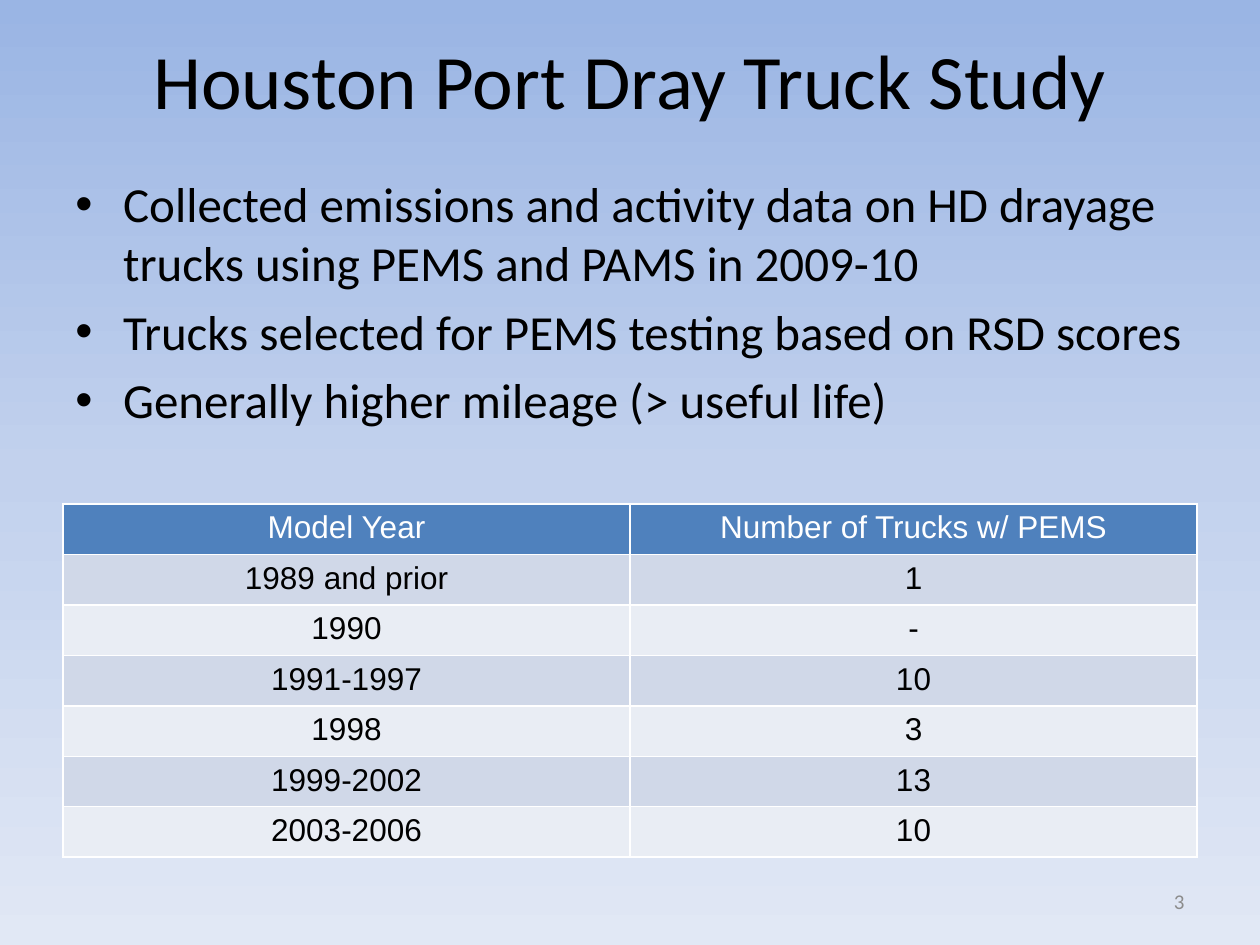
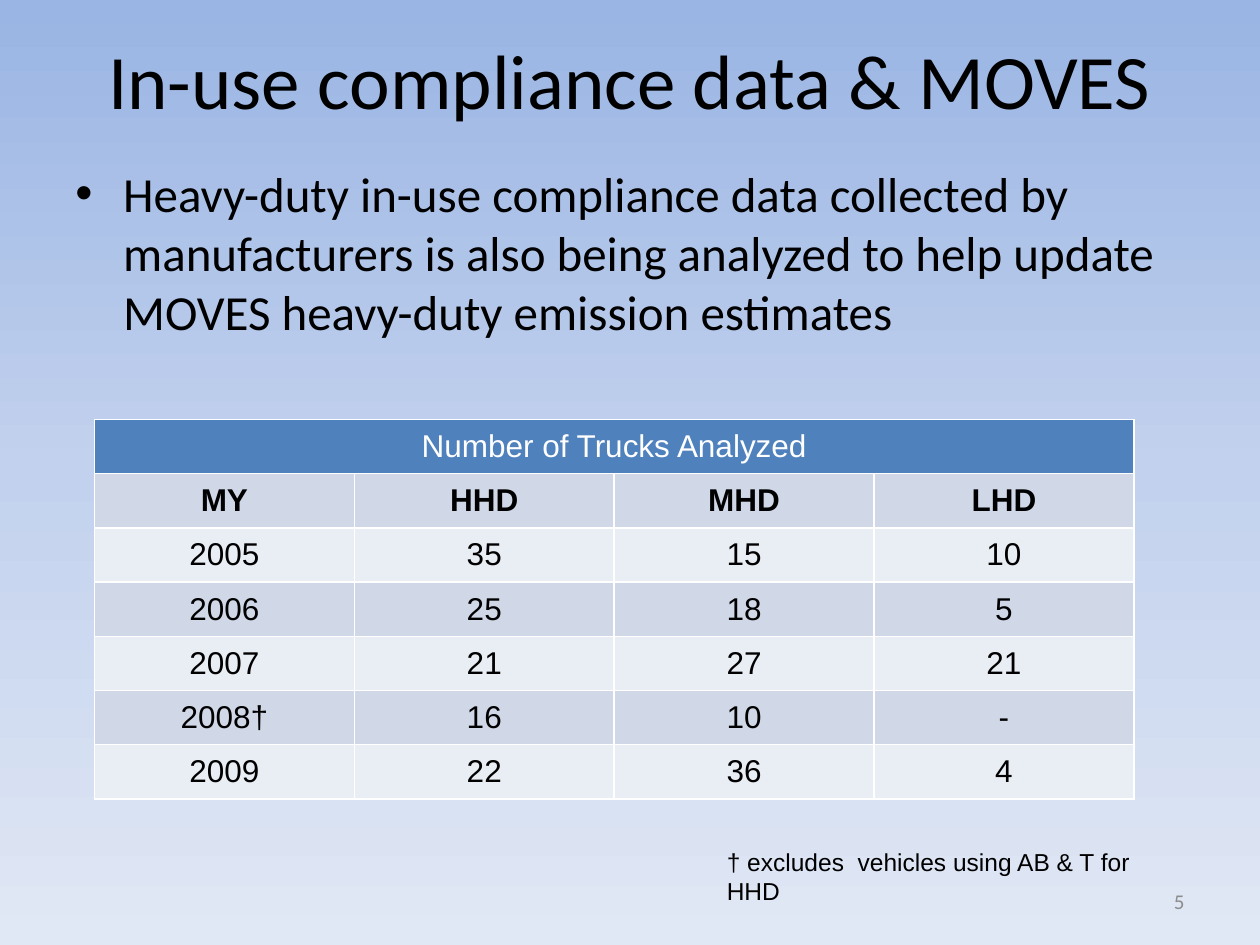
from copy import deepcopy

from lxml.etree import SubElement
from pptx import Presentation
from pptx.dml.color import RGBColor
from pptx.enum.text import MSO_ANCHOR, PP_ALIGN
from pptx.oxml.ns import qn
from pptx.util import Inches, Pt

BLACK = RGBColor(0x00, 0x00, 0x00)
WHITE = RGBColor(0xFF, 0xFF, 0xFF)
GRAY = RGBColor(0x8C, 0x8C, 0x8C)
HEADER_BLUE = RGBColor(0x4F, 0x81, 0xBD)
BAND_DARK = RGBColor(0xD0, 0xD8, 0xE8)
BAND_LIGHT = RGBColor(0xE9, 0xED, 0xF4)
SKY = [(0, RGBColor(0x9A, 0xB5, 0xE4)),
       (0.5, RGBColor(0xC2, 0xD1, 0xED)),
       (1, RGBColor(0xE1, 0xE8, 0xF5))]

TITLE_BOX = (0.5, 0, 9, 1.25)
NUMBER_BOX = (7.17, 6.95, 2.33, 0.4)
BULLET_INDENT = Inches(0.38)


def write(para, text, font="Arial", size=18, color=BLACK, bold=False,
          align=PP_ALIGN.LEFT):
    """Put formatted text into a paragraph."""
    para.alignment = align
    span = para.add_run()
    span.text = text
    span.font.name = font
    span.font.size = Pt(size)
    span.font.bold = bold
    span.font.color.rgb = color


def add_frame(page, box, anchor=MSO_ANCHOR.TOP):
    frame = page.shapes.add_textbox(*map(Inches, box)).text_frame
    frame.word_wrap = True
    frame.vertical_anchor = anchor
    return frame


def add_background(page):
    fill = page.background.fill
    fill.gradient()
    fill.gradient_angle = 270
    stop_list = page.background._cSld.find(".//" + qn("a:gsLst"))
    stop_list.append(deepcopy(stop_list[-1]))
    for stop, (position, color) in zip(fill.gradient_stops, SKY):
        stop.position = position
        stop.color.rgb = color


def add_base(deck, title, number):
    """Start a page with its background, title and page number."""
    page = deck.slides.add_slide(deck.slide_layouts[6])
    add_background(page)
    write(add_frame(page, TITLE_BOX, MSO_ANCHOR.MIDDLE).paragraphs[0], title,
          font="Calibri", size=44, align=PP_ALIGN.CENTER)
    write(add_frame(page, NUMBER_BOX, MSO_ANCHOR.MIDDLE).paragraphs[0],
          str(number), font="Calibri", size=12, color=GRAY,
          align=PP_ALIGN.RIGHT)
    return page


def add_bullets(page, box, lines):
    frame = add_frame(page, box)
    for index, line in enumerate(lines):
        para = frame.add_paragraph() if index else frame.paragraphs[0]
        para.space_before = Pt(5.6)
        write(para, line, font="Calibri", size=28)
        properties = para._p.get_or_add_pPr()
        properties.set("marL", str(BULLET_INDENT))
        properties.set("indent", str(-BULLET_INDENT))
        SubElement(properties, qn("a:buFont"), typeface="Arial")
        SubElement(properties, qn("a:buChar"), char="•")


def add_borders(cell):
    properties = cell._tc.get_or_add_tcPr()
    for side in "LRTB":
        line = SubElement(properties, qn(f"a:ln{side}"), w=str(Pt(1)))
        fill = SubElement(line, qn("a:solidFill"))
        SubElement(fill, qn("a:srgbClr"), val=str(WHITE))


def add_banded_table(page, box, rows, bold_row=None, anchor=MSO_ANCHOR.TOP):
    """Fill the box with equal rows and columns under a blue header."""
    row_count, column_count = len(rows), len(rows[-1])
    table = page.shapes.add_table(row_count, column_count,
                                  *map(Inches, box)).table
    for row_index, values in enumerate(rows):
        is_header = row_index == 0
        band = BAND_DARK if row_index % 2 else BAND_LIGHT
        for column_index in range(column_count):
            cell = table.cell(row_index, column_index)
            add_borders(cell)
            cell.fill.solid()
            cell.fill.fore_color.rgb = HEADER_BLUE if is_header else band
            cell.vertical_anchor = anchor
            if column_index < len(values):
                write(cell.text_frame.paragraphs[0], values[column_index],
                      color=WHITE if is_header else BLACK,
                      bold=row_index == bold_row, align=PP_ALIGN.CENTER)
    # A single heading spans the whole table
    if len(rows[0]) == 1:
        table.cell(0, 0).merge(table.cell(0, column_count - 1))


def add_dray_study(deck):
    page = add_base(deck, "Houston Port Dray Truck Study", 3)
    add_bullets(page, (0.5, 1.33, 9, 3.25), [
        "Collected emissions and activity data on HD drayage trucks using "
        "PEMS and PAMS in 2009-10",
        "Trucks selected for PEMS testing based on RSD scores",
        "Generally higher mileage (> useful life)",
    ])
    add_banded_table(page, (0.5, 4, 9, 2.66), [
        ("Model Year", "Number of Trucks w/ PEMS"),
        ("1989 and prior", "1"),
        ("1990", "-"),
        ("1991-1997", "10"),
        ("1998", "3"),
        ("1999-2002", "13"),
        ("2003-2006", "10"),
    ])


def add_compliance(deck):
    page = add_base(deck, "In-use compliance data & MOVES", 5)
    add_bullets(page, (0.5, 1.25, 9, 2.5), [
        "Heavy-duty in-use compliance data collected by manufacturers is "
        "also being analyzed to help update MOVES heavy-duty emission "
        "estimates",
    ])
    add_banded_table(page, (0.75, 3.33, 8.25, 3.01), [
        ("Number of Trucks Analyzed",),
        ("MY", "HHD", "MHD", "LHD"),
        ("2005", "35", "15", "10"),
        ("2006", "25", "18", "5"),
        ("2007", "21", "27", "21"),
        ("2008†", "16", "10", "-"),
        ("2009", "22", "36", "4"),
    ], bold_row=1, anchor=MSO_ANCHOR.MIDDLE)
    # Footnote to the table
    footnote = add_frame(page, (5.67, 6.67, 3.67, 0.34))
    write(footnote.paragraphs[0],
          "† excludes  vehicles using AB & T for HHD", size=14)


def main():
    deck = Presentation()
    deck.slide_width = Inches(10)
    deck.slide_height = Inches(7.5)
    add_dray_study(deck)
    add_compliance(deck)
    deck.save("out.pptx")


if __name__ == "__main__":
    main()
